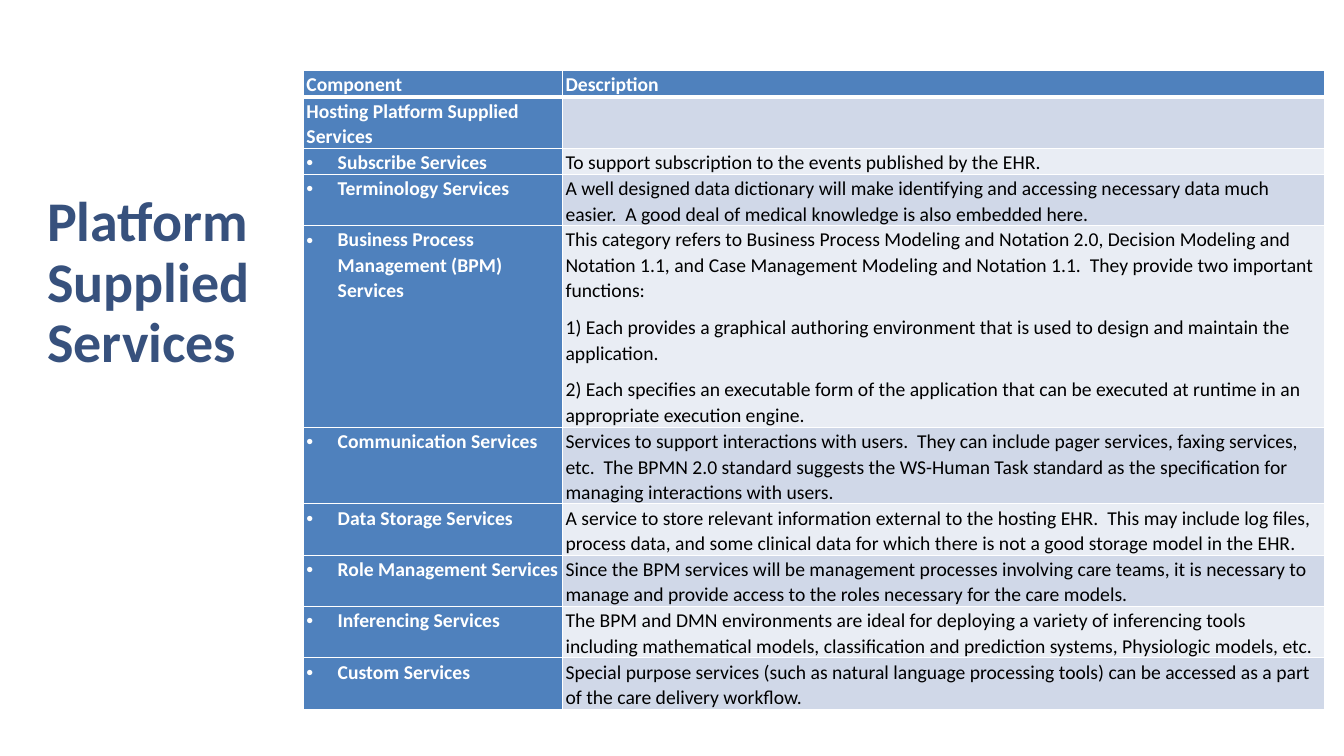
from dataclasses import dataclass

from lxml.etree import SubElement
from pptx import Presentation
from pptx.dml.color import RGBColor
from pptx.enum.text import MSO_ANCHOR as Anchor
from pptx.oxml.ns import qn
from pptx.util import Inches, Pt

WHITE = RGBColor(0xFF, 0xFF, 0xFF)
BLACK = RGBColor(0x00, 0x00, 0x00)
NAVY = RGBColor(0x37, 0x51, 0x7D)
BLUE = RGBColor(0x4F, 0x81, 0xBD)
BANDS = (RGBColor(0xE9, 0xED, 0xF4), RGBColor(0xD0, 0xD8, 0xE8))

FONT = "Calibri"
TITLE = {"name": FONT, "size": Pt(40), "bold": True}
LABEL = {"name": FONT, "size": Pt(14), "bold": True}
BODY = {"name": FONT, "size": Pt(14), "bold": False}
SPACING = {"line_spacing": 1.07, "space_after": Pt(8)}
CELL_MARGINS = {
    "margin_left": Inches(0.03),
    "margin_top": Inches(0.01),
    "margin_right": Inches(0.03),
    "margin_bottom": Inches(0),
}
COLUMN_WIDTHS = (2.57, 7.56)
LINE_HEIGHT = 0.25
BULLET_INDENT = Inches(0.31)


@dataclass
class Service:
    component: str
    description: tuple[str, ...]
    lines: int
    bulleted: bool = True


SERVICES = [
    Service("Component", ("Description",), 1, False),
    Service("Hosting Platform Supplied Services", ("",), 2, False),
    Service("Subscribe Services", (
        "To support subscription to the events published by the EHR.",), 1),
    Service("Terminology Services", (
        "A well designed data dictionary will make identifying and accessing necessary data "
        "much easier.  A good deal of medical knowledge is also embedded here.",), 2),
    Service("Business Process Management (BPM) Services", (
        "This category refers to Business Process Modeling and Notation 2.0, Decision Modeling "
        "and Notation 1.1, and Case Management Modeling and Notation 1.1.  They provide two "
        "important functions:",
        "1) Each provides a graphical authoring environment that is used to design and maintain "
        "the application.",
        "2) Each specifies an executable form of the application that can be executed at runtime "
        "in an appropriate execution engine."), 8),
    Service("Communication Services", (
        "Services to support interactions with users.  They can include pager services, faxing "
        "services, etc.  The BPMN 2.0 standard suggests the WS-Human Task standard as the "
        "specification for managing interactions with users.",), 3),
    Service("Data Storage Services", (
        "A service to store relevant information external to the hosting EHR.  This may include "
        "log files, process data, and some clinical data for which there is not a good storage "
        "model in the EHR.",), 2),
    Service("Role Management Services", (
        "Since the BPM services will be management processes involving care teams, it is "
        "necessary to manage and provide access to the roles necessary for the care models.",), 2),
    Service("Inferencing Services", (
        "The BPM and DMN environments are ideal for deploying a variety of inferencing tools "
        "including mathematical models, classification and prediction systems, Physiologic "
        "models, etc.",), 2),
    Service("Custom Services", (
        "Special purpose services (such as natural language processing tools) can be accessed "
        "as a part of the care delivery workflow.",), 2),
]


def apply_format(target, values: dict) -> None:
    for attribute, value in values.items():
        setattr(target, attribute, value)


def add_bullet(paragraph) -> None:
    properties = paragraph._p.get_or_add_pPr()
    properties.set("marL", str(BULLET_INDENT))
    properties.set("indent", str(-BULLET_INDENT))
    SubElement(properties, qn("a:buFont"), typeface="Arial")
    SubElement(properties, qn("a:buChar"), char="•")


def add_borders(cell, top: float, bottom: float) -> None:
    properties = cell._tc.get_or_add_tcPr()
    for side, width in {"L": 1, "R": 1, "T": top, "B": bottom}.items():
        border = SubElement(properties, qn(f"a:ln{side}"), w=str(Pt(width)))
        fill = SubElement(border, qn("a:solidFill"))
        SubElement(fill, qn("a:srgbClr"), val=str(WHITE))


def fill_cell(cell, texts: tuple[str, ...], style: dict, color: RGBColor,
              background: RGBColor, row: int, bulleted: bool = False) -> None:
    apply_format(cell, CELL_MARGINS)
    add_borders(cell, top=3 if row == 1 else 1, bottom=3 if row == 0 else 1)
    cell.fill.solid()
    cell.fill.fore_color.rgb = background
    cell.text_frame.text = "\n".join(texts)
    for paragraph in cell.text_frame.paragraphs:
        apply_format(paragraph, SPACING)
        if bulleted:
            add_bullet(paragraph)
        apply_format(paragraph.font, style)
        paragraph.font.color.rgb = color


def add_title(slide) -> None:
    box = slide.shapes.add_textbox(Inches(0.37), Inches(1.83), Inches(4.1), Inches(1.94))
    frame = box.text_frame
    apply_format(frame, {"word_wrap": True, "vertical_anchor": Anchor.BOTTOM})
    heading = frame.paragraphs[0]
    heading.text = "Platform Supplied Services"
    heading.line_spacing = 0.9
    apply_format(heading.font, TITLE)
    heading.font.color.rgb = NAVY


def add_service_table(slide) -> None:
    height = LINE_HEIGHT * sum(service.lines for service in SERVICES)
    table = slide.shapes.add_table(
        len(SERVICES), len(COLUMN_WIDTHS),
        Inches(3.01), Inches(0.7), Inches(sum(COLUMN_WIDTHS)), Inches(height)).table
    for column, width in zip(table.columns, COLUMN_WIDTHS):
        column.width = Inches(width)
    for row, service in enumerate(SERVICES):
        table.rows[row].height = Inches(LINE_HEIGHT * service.lines)
        fill_cell(table.cell(row, 0), (service.component,), LABEL, WHITE, BLUE, row,
                  service.bulleted)
        style, color, background = (
            (LABEL, WHITE, BLUE) if row == 0 else (BODY, BLACK, BANDS[row % 2]))
        fill_cell(table.cell(row, 1), service.description, style, color, background, row)


def main() -> None:
    presentation = Presentation()
    presentation.slide_width = Inches(13.33)
    presentation.slide_height = Inches(7.5)
    slide = presentation.slides.add_slide(presentation.slide_layouts[6])
    add_title(slide)
    add_service_table(slide)
    presentation.save("out.pptx")


if __name__ == "__main__":
    main()
